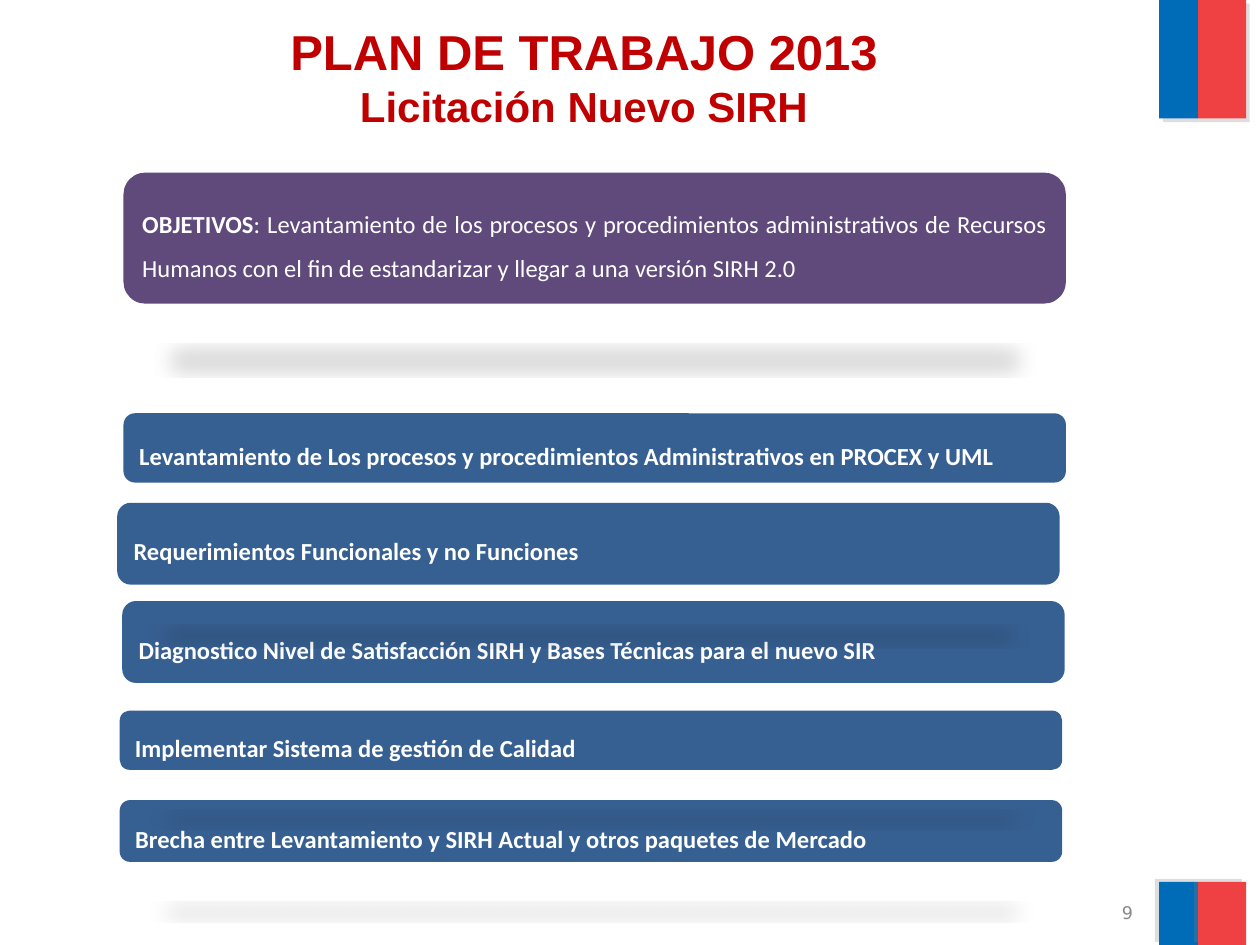
from lxml import etree
from pptx import Presentation
from pptx.dml.color import RGBColor
from pptx.enum import shapes, text
from pptx.oxml import ns
from pptx.util import Inches, Pt

RED = RGBColor(0xC0, 0x00, 0x00)
PURPLE = RGBColor(0x60, 0x4A, 0x7B)
BLUE = RGBColor(0x37, 0x60, 0x92)
WHITE = RGBColor(0xFF, 0xFF, 0xFF)
GREY = RGBColor(0x89, 0x89, 0x89)
FLAG_BLUE = RGBColor(0x00, 0x6C, 0xB7)
FLAG_RED = RGBColor(0xEF, 0x41, 0x44)

# Content
TITLE_LINES = [("PLAN DE TRABAJO 2013", 28), ("Licitación Nuevo SIRH", 24)]
PAGE_NUMBER = "9"
BAR_WIDTH = 7.48
# left, top, height, fill, runs (wording, bold); back to front
BARS = [
    (0.98, 1.37, 1.04, PURPLE, [
        ("OBJETIVOS", True),
        (": Levantamiento de los procesos y procedimientos administrativos de "
         "Recursos Humanos con el fin de estandarizar y llegar a una versión "
         "SIRH 2.0", False)]),
    (0.98, 3.28, 0.55, BLUE, [
        ("Levantamiento de Los procesos y procedimientos Administrativos en "
         "PROCEX y UML", True)]),
    (0.95, 6.35, 0.49, BLUE, [
        ("Brecha entre Levantamiento y SIRH Actual y otros paquetes de Mercado",
         True)]),
    (0.97, 4.77, 0.65, BLUE, [
        ("Diagnostico Nivel de Satisfacción SIRH y Bases Técnicas para el "
         "nuevo SIR", True)]),
    (0.95, 5.64, 0.47, BLUE, [
        ("Implementar Sistema de gestión de Calidad", True)]),
    (0.93, 3.99, 0.65, BLUE, [
        ("Requerimientos Funcionales y no Funciones", True)]),
]
# Flag bands: top, height, shadow direction; each has a blue and a red half
FLAGS = [(0, 0.94, 45), (7, 0.5, 215)]
FLAG_HALVES = [(9.2, 0.31, FLAG_BLUE), (9.51, 0.38, FLAG_RED)]


def add_shadow(shape, color, alpha, blur, distance, direction, **scale):
    """Outer shadow; blur and distance in points, direction in degrees."""
    shape.shadow.inherit = False
    effects = shape._element.spPr.find(ns.qn("a:effectLst"))
    shadow = etree.SubElement(
        effects, ns.qn("a:outerShdw"), blurRad=str(Pt(blur)),
        dist=str(Pt(distance)), dir=str(direction * 60000),
        rotWithShape="0", **scale)
    tint = etree.SubElement(shadow, ns.qn("a:srgbClr"), val=color)
    etree.SubElement(tint, ns.qn("a:alpha"), val=str(alpha * 1000))


def add_block(slide, kind, left, top, width, height, fill):
    block = slide.shapes.add_shape(
        kind, Inches(left), Inches(top), Inches(width), Inches(height))
    block.fill.solid()
    block.fill.fore_color.rgb = fill
    block.line.fill.background()
    return block


def add_run(paragraph, wording, font, size, color, bold=False):
    run = paragraph.add_run()
    run.text = wording
    run.font.name = font
    run.font.size = Pt(size)
    run.font.bold = bold
    run.font.color.rgb = color


def main():
    prs = Presentation()
    prs.slide_width, prs.slide_height = Inches(10), Inches(7.5)
    slide = prs.slides.add_slide(prs.slide_layouts[5])

    # Title
    title = slide.shapes.title
    title.left, title.top = Inches(0.17), Inches(0.12)
    title.width, title.height = Inches(8.93), Inches(1.25)
    frame = title.text_frame
    frame.auto_size = text.MSO_AUTO_SIZE.NONE
    frame.vertical_anchor = text.MSO_ANCHOR.TOP
    heading = frame.paragraphs[0]
    heading.alignment = text.PP_ALIGN.CENTER
    for i, (wording, size) in enumerate(TITLE_LINES):
        if i:
            heading.add_line_break()
        add_run(heading, wording, "Arial", size, RED, True)

    # Flag bands in the right corners
    for top, height, direction in FLAGS:
        for left, width, fill in FLAG_HALVES:
            band = add_block(slide, shapes.MSO_SHAPE.RECTANGLE,
                             left, top, width, height, fill)
            add_shadow(band, "808080", 25, 0, 3, direction)

    # Page number
    number = slide.shapes.add_textbox(
        Inches(6.76), Inches(7.14), Inches(2.33), Inches(0.21)).text_frame
    number.word_wrap = True
    number.vertical_anchor = text.MSO_ANCHOR.MIDDLE
    number.paragraphs[0].alignment = text.PP_ALIGN.RIGHT
    add_run(number.paragraphs[0], PAGE_NUMBER, "DejaVu Sans", 10, GREY)

    # Objective and work items, each with a flattened shadow below
    for left, top, height, fill, runs in BARS:
        bar = add_block(slide, shapes.MSO_SHAPE.ROUNDED_RECTANGLE,
                        left, top, BAR_WIDTH, height, fill)
        add_shadow(bar, "000000", 15, 12, 25, 90, sx="90000", sy="-19000")
        bar.text_frame.word_wrap = True
        bar.text_frame.vertical_anchor = text.MSO_ANCHOR.MIDDLE
        paragraph = bar.text_frame.paragraphs[0]
        paragraph.alignment = text.PP_ALIGN.JUSTIFY
        paragraph.line_spacing = 1.5
        for wording, bold in runs:
            add_run(paragraph, wording, "Calibri", 14, WHITE, bold)

    prs.save("out.pptx")


if __name__ == "__main__":
    main()
